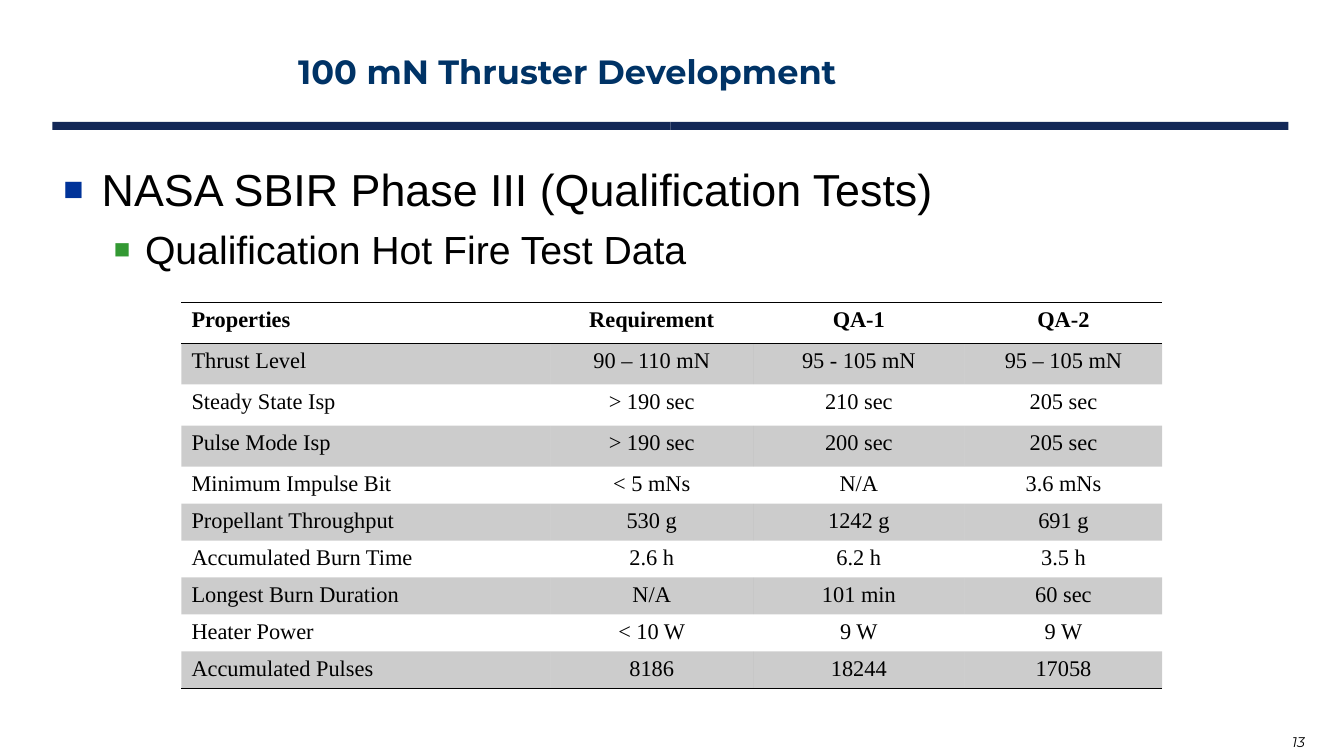
from lxml import etree
from pptx import Presentation
from pptx.dml.color import RGBColor
from pptx.enum.shapes import MSO_SHAPE
from pptx.enum.text import MSO_ANCHOR, PP_ALIGN
from pptx.oxml.ns import qn
from pptx.util import Inches, Pt

RECT = MSO_SHAPE.RECTANGLE
TOP, LOW = MSO_ANCHOR.TOP, MSO_ANCHOR.BOTTOM
LEFT, MID = PP_ALIGN.LEFT, PP_ALIGN.CENTER
PLAIN = "{2D5ABB26-0587-4C30-8999-92F81FD0307C}"  # table style without grid

theme = {
    "ink": "000000", "bar": "132857", "title": "003366",
    "marks": ["003399", "339933"],
    "head": "Montserrat", "body": "Arial", "data": "Times New Roman",
    "title_pt": 24, "body_pt": [32, 28], "data_pt": 16, "page_pt": 10,
}

deck = Presentation()
deck.slide_width, deck.slide_height = Inches(13.33), Inches(7.5)
slide = deck.slides.add_slide(deck.slide_layouts[6])

# Grid of 100 columns by 100 rows
col, row = deck.slide_width / 100, deck.slide_height / 100


def style(para, face, size, color, bold=False, italic=False):
    for run in para.runs:
        font = run.font
        font.name, font.size = face, Pt(size)
        font.bold, font.italic = bold, italic
        font.color.rgb = RGBColor.from_string(color)


def add_box(x, y, wide, high, text, anchor=TOP):
    box = slide.shapes.add_textbox(int(x * col), int(y * row),
                                   int(wide * col), int(high * row))
    frame = box.text_frame
    frame.word_wrap = True
    frame.vertical_anchor = anchor
    frame.text = text
    return frame.paragraphs


# Rule under the title, in two halves
half = 45.98
for i in range(2):
    bar = slide.shapes.add_shape(RECT, int((3.9 + i * half) * col), int(16.13 * row),
                                 int(half * col), int(1.07 * row))
    bar.shadow.inherit = False
    bar.fill.solid()
    bar.fill.fore_color.rgb = RGBColor.from_string(theme["bar"])
    bar.line.fill.background()

# Title and page number
title = add_box(21.45, 5.2, 43.5, 7.47, "100 mN Thruster Development", LOW)
style(title[0], theme["head"], theme["title_pt"], theme["title"], bold=True)
page = add_box(95.4, 96.4, 4.6, 3.6, "13")
style(page[0], theme["head"], theme["page_pt"], theme["ink"], italic=True)

# Bulleted points
points = add_box(3.98, 20.8, 91.8, 15.47,
                 "NASA SBIR Phase III (Qualification Tests)\nQualification Hot Fire Test Data")
dents = [(0.38, -0.38, 75), (0.81, -0.31, 70)]
for i, (para, (edge, hang, scale)) in enumerate(zip(points, dents)):
    para.level = i
    props = para._p.get_or_add_pPr()
    props.set("marL", str(Inches(edge)))
    props.set("indent", str(Inches(hang)))
    tint = etree.SubElement(props, qn("a:buClr"))
    etree.SubElement(tint, qn("a:srgbClr"), val=theme["marks"][i])
    etree.SubElement(props, qn("a:buSzPct"), val=str(scale * 1000))
    etree.SubElement(props, qn("a:buFont"), typeface=theme["body"])
    etree.SubElement(props, qn("a:buChar"), char="■")
    style(para, theme["body"], theme["body_pt"][i], theme["ink"])
points[1].space_before = Pt(7)

# Test data
data = [
    ("Properties", "Requirement", "QA-1", "QA-2"),
    ("Thrust Level", "90 – 110 mN", "95 - 105 mN", "95 – 105 mN"),
    ("Steady State Isp", "> 190 sec", "210 sec", "205 sec"),
    ("Pulse Mode Isp", "> 190 sec", "200 sec", "205 sec"),
    ("Minimum Impulse Bit", "< 5 mNs", "N/A", "3.6 mNs"),
    ("Propellant Throughput", "530 g", "1242 g", "691 g"),
    ("Accumulated Burn Time", "2.6 h", "6.2 h", "3.5 h"),
    ("Longest Burn Duration", "N/A", "101 min", "60 sec"),
    ("Heater Power", "< 10 W", "9 W", "9 W"),
    ("Accumulated Pulses", "8186", "18244", "17058"),
]
widths = [27.45, 15.08, 15.75, 14.7]
highs = [5.43] * 4 + [4.65] * 5 + [4.93]
last = len(data) - 1

table = slide.shapes.add_table(len(data), len(widths), int(13.5 * col), int(40 * row),
                               int(sum(widths) * col), int(sum(highs) * row)).table
table.first_row = table.horz_banding = False
table._tbl.tblPr.find(qn("a:tableStyleId")).text = PLAIN
for c, wide in enumerate(widths):
    table.columns[c].width = int(wide * col)

for r, line in enumerate(data):
    table.rows[r].height = int(highs[r] * row)
    sides = {0: ["a:lnT", "a:lnB"], last: ["a:lnB"]}.get(r, [])
    for c, text in enumerate(line):
        cell = table.cell(r, c)
        cell.text_frame.text = text
        para = cell.text_frame.paragraphs[0]
        para.alignment = MID if c else LEFT
        style(para, theme["data"], theme["data_pt"], theme["ink"], bold=r == 0)
        props = cell._tc.get_or_add_tcPr()
        # Every second row is shaded with 20% ink
        if r % 2:
            cell.fill.solid()
            cell.fill.fore_color.rgb = RGBColor.from_string(theme["ink"])
            shade = props.find(".//" + qn("a:srgbClr"))
            etree.SubElement(shade, qn("a:alpha"), val="20000")
        else:
            cell.fill.background()
        # Lines around the header and below the last row
        for n, side in enumerate(sides):
            edge = etree.Element(qn(side), w=str(Pt(1)))
            paint = etree.SubElement(edge, qn("a:solidFill"))
            etree.SubElement(paint, qn("a:srgbClr"), val=theme["ink"])
            props.insert(n, edge)

deck.save("out.pptx")
